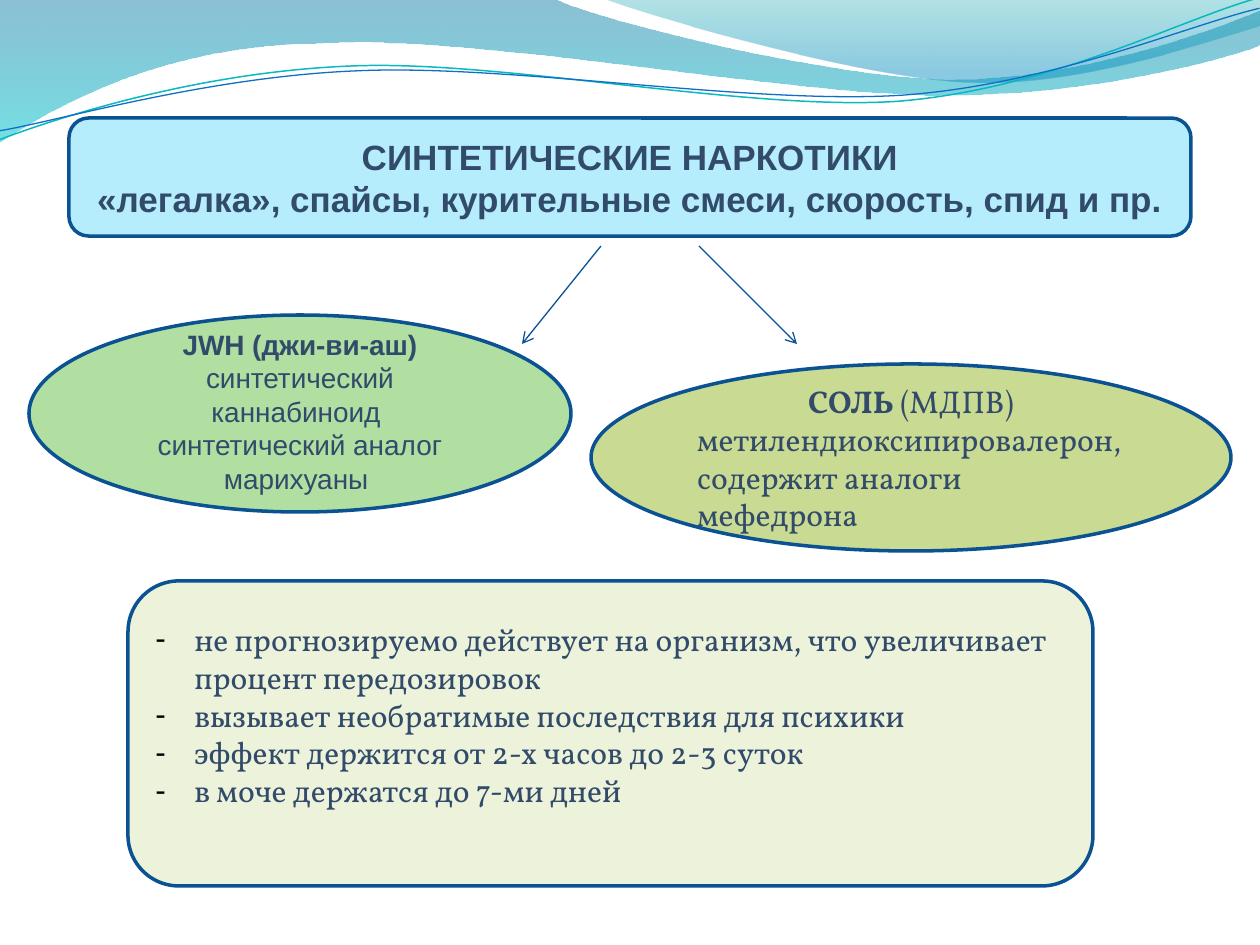
import pptx
import pptx.util
import pptx.dml.color
import pptx.enum.shapes
import pptx.enum.text
import pptx.oxml.ns
import lxml.etree

PX = 914400 // 126
RGB = pptx.dml.color.RGBColor
INK = RGB(0x32, 0x4B, 0x6A)
BORDER = RGB(0x0B, 0x52, 0x92)
ARROW = RGB(0x09, 0x52, 0x95)
SKY = RGB(0xB5, 0xED, 0xFD)
GREEN = RGB(0xB0, 0xDF, 0xA1)
OLIVE = RGB(0xC9, 0xDA, 0x92)
CREAM = RGB(0xED, 0xF3, 0xDB)
TEAL_LINE = RGB(0x0A, 0xB8, 0xBF)
BLUE_LINE = RGB(0x0F, 0x6F, 0xC6)
WAVE_TOP = RGB(0x00, 0x74, 0xA1)
WAVE_BOTTOM = RGB(0x00, 0xC6, 0xCF)
CREST_TOP = RGB(0x00, 0xA1, 0xA9)
CREST_BOTTOM = RGB(0x00, 0x8B, 0xBF)

LEFT = pptx.enum.text.PP_ALIGN.LEFT
CENTER = pptx.enum.text.PP_ALIGN.CENTER
ROUNDED = pptx.enum.shapes.MSO_SHAPE.ROUNDED_RECTANGLE
OVAL = pptx.enum.shapes.MSO_SHAPE.OVAL


def add_xml(parent, tag, **attributes):
    return lxml.etree.SubElement(parent, pptx.oxml.ns.qn(tag), attributes)


def add_curve(shapes, segments, close):
    points = [(segment[i] * PX, segment[i + 1] * PX)
              for segment in segments for i in range(0, len(segment), 2)]
    builder = shapes.build_freeform(*points[0])
    builder.add_line_segments(points[1:], close=close)
    curve = builder.convert_to_shape()
    curve.shadow.inherit = False
    edges = iter(list(curve.element.spPr.iter(pptx.oxml.ns.qn("a:lnTo"))))
    for segment in segments[1:]:
        edge = next(edges)
        if len(segment) == 6:
            edge.tag = pptx.oxml.ns.qn("a:cubicBezTo")
            for follower in (next(edges), next(edges)):
                edge.append(follower[0])
                follower.getparent().remove(follower)
    return curve


deck = pptx.Presentation()
deck.slide_width = pptx.util.Inches(10)
deck.slide_height = pptx.util.Inches(7.5)
slide = deck.slides.add_slide(deck.slide_layouts[6])

waves = [
    ([(0, -1), (554, -1), (600, 21, 837, 79, 955, 79), (1075, 79, 1207, 33, 1260, 11),
      (1261, 45), (1239, 55, 1096, 96, 940, 95), (784, 95, 481, 35, 324, 43),
      (163, 44, 58, 105, -1, 142)],
     [(0, WAVE_TOP, 45), (1, WAVE_BOTTOM, 55)]),
    ([(604, -1), (641, 14, 859, 78, 969, 82), (1079, 87, 1211, 40, 1260, 26),
      (1260, 0)],
     [(0, CREST_TOP, 30), (0.8, CREST_BOTTOM, 45)]),
]
for segments, stops in waves:
    wave = add_curve(slide.shapes, segments, True)
    wave.line.fill.background()
    wave.fill.gradient()
    wave.fill.gradient_angle = 270
    for stop, (position, color, opacity) in zip(wave.fill.gradient_stops, stops):
        stop.position = position
        stop.color.rgb = color
    for tint, (position, color, opacity) in zip(
            wave.element.spPr.iter(pptx.oxml.ns.qn("a:srgbClr")), stops):
        add_xml(tint, "a:alpha", val=str(opacity * 1000))

ripples = [
    ([(-3, 110), (59, 90, 199, 52, 350, 53), (499, 53, 745, 117, 896, 114),
      (1049, 109, 1184, 45, 1260, 28)], TEAL_LINE, 0.85),
    ([(-2, 101), (57, 94, 207, 57, 357, 58), (509, 58, 750, 111, 902, 108),
      (1052, 104, 1188, 52, 1262, 38)], BLUE_LINE, 0.75),
]
for segments, color, width in ripples:
    ripple = add_curve(slide.shapes, segments, False)
    ripple.rotation = 357.3
    ripple.fill.background()
    ripple.line.color.rgb = color
    ripple.line.width = pptx.util.Pt(width)

title_format = {"name": "Arial", "size": pptx.util.Pt(20)}
spice_format = {"name": "Arial", "size": pptx.util.Pt(16)}
salt_format = {"name": "Vollkorn", "size": pptx.util.Pt(18)}

panels = [
    (ROUNDED, (69, 118, 1122, 118), SKY, title_format, 6, False, [
        (CENTER, [("СИНТЕТИЧЕСКИЕ НАРКОТИКИ", True)]),
        (CENTER, [("«легалка», спайсы, курительные смеси, скорость, спид и пр.", True)])]),
    (OVAL, (29, 315, 542, 197), GREEN, spice_format, 11, False, [
        (CENTER, [("JWH (джи-ви-аш)", True)]),
        (CENTER, [("синтетический каннабиноид ", False)]),
        (CENTER, [("синтетический аналог марихуаны ", False)])]),
    (OVAL, (591, 364, 640, 187), OLIVE, salt_format, 6, False, [
        (CENTER, [("СОЛЬ ", True), ("(МДПВ)", False)]),
        (LEFT, [("метилендиоксипировалерон,", False)]),
        (LEFT, [("содержит аналоги мефедрона", False)])]),
    (ROUNDED, (128, 581, 965, 305), CREAM, salt_format, 44, True, [
        (LEFT, [("не прогнозируемо действует на организм, что увеличивает "
                 "процент передозировок", False)]),
        (LEFT, [("вызывает необратимые последствия для психики", False)]),
        (LEFT, [("эффект держится от 2-х часов до 2-3 суток", False)]),
        (LEFT, [("в моче держатся до 7-ми дней", False)])]),
]
for outline, box, color, text_format, bottom, bulleted, lines in panels:
    panel = slide.shapes.add_shape(outline, *[side * PX for side in box])
    panel.shadow.inherit = False
    panel.fill.solid()
    panel.fill.fore_color.rgb = color
    panel.line.color.rgb = BORDER
    panel.line.width = pptx.util.Pt(2)
    frame = panel.text_frame
    frame.word_wrap = True
    frame.vertical_anchor = pptx.enum.text.MSO_ANCHOR.MIDDLE
    frame.margin_bottom = bottom * PX
    for number, (alignment, runs) in enumerate(lines):
        paragraph = frame.add_paragraph() if number else frame.paragraphs[0]
        paragraph.alignment = alignment
        if bulleted:
            properties = paragraph._p.get_or_add_pPr()
            properties.set("marL", str(39 * PX))
            properties.set("indent", str(-39 * PX))
            add_xml(add_xml(properties, "a:buClr"), "a:srgbClr", val="000000")
            add_xml(properties, "a:buFont", typeface="Arial")
            add_xml(properties, "a:buChar", char="-")
        for words, bold in runs:
            run = paragraph.add_run()
            run.text = words
            run.font.bold = bold
            run.font.color.rgb = INK
            for key, value in text_format.items():
                setattr(run.font, key, value)

for start_x, end_x in [(699, 797), (601, 522)]:
    arrow = slide.shapes.add_connector(
        pptx.enum.shapes.MSO_CONNECTOR.STRAIGHT,
        start_x * PX, 246 * PX, end_x * PX, 344 * PX)
    arrow.line.color.rgb = ARROW
    arrow.line.width = pptx.util.Pt(0.75)
    add_xml(arrow.line._get_or_add_ln(), "a:tailEnd", type="arrow")
    add_xml(arrow._element.spPr, "a:effectLst")

deck.save("out.pptx")
